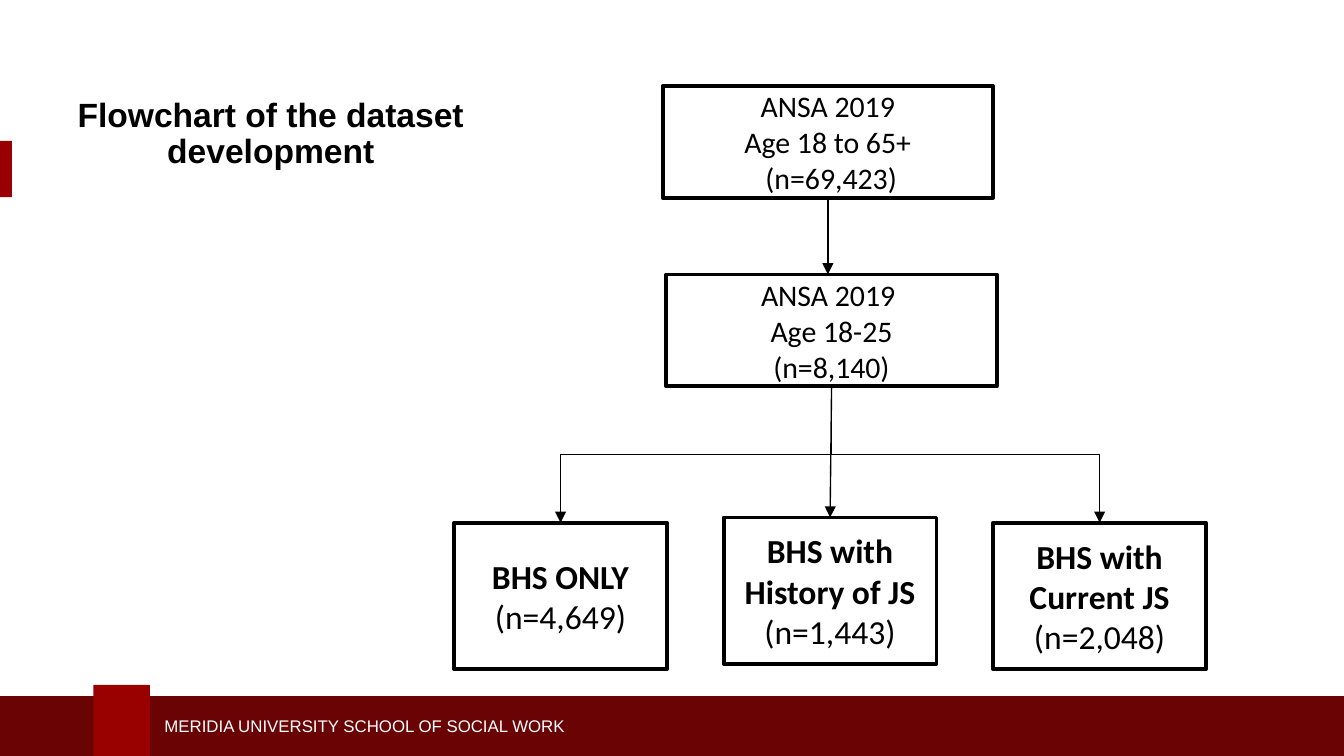
from lxml.etree import SubElement
from pptx import Presentation
from pptx.dml.color import RGBColor
from pptx.enum.shapes import MSO_CONNECTOR, MSO_SHAPE
from pptx.enum.text import MSO_ANCHOR, MSO_AUTO_SIZE, PP_ALIGN
from pptx.oxml.ns import qn
from pptx.util import Pt

# Content
TITLE = "Flowchart of the dataset development"
FOOTER = "MERIDIA UNIVERSITY SCHOOL OF SOCIAL WORK"
# Lines of text, left, top
SAMPLES = [
    (["ANSA 2019", "Age 18 to 65+", " (n=69,423)"], 355, 46),
    (["ANSA 2019 ", "Age 18-25", "(n=8,140)"], 357, 147),
]
# Group name, count, top
GROUPS = [
    ("BHS ONLY", "(n=4,649)", 280),
    ("BHS with History of JS", "(n=1,443)", 277.2),
    ("BHS with Current JS", "(n=2,048)", 280),
]
SAMPLE_SIZE = (177, 60)
GROUP_SIZE = (114, 78.5)
GROUP_LEFT, GROUP_STEP = 243.3, 144.4
# Left, top, width, height, colour
BANDS = [
    (0, 75.5, 6.4, 30.2, "990000"),
    (-2, 373, 726, 36, "690304"),
    (50, 367, 30.3, 42, "990000"),
]


def color(value):
    return RGBColor.from_string(value)


def write(frame, lines, size, font="Calibri", ink="000000", bold_lines=0,
          align=PP_ALIGN.CENTER, anchor=MSO_ANCHOR.MIDDLE):
    frame.word_wrap = True
    frame.vertical_anchor = anchor
    for i, line in enumerate(lines):
        paragraph = frame.paragraphs[0] if i == 0 else frame.add_paragraph()
        paragraph.alignment = align
        run = paragraph.add_run()
        run.text = line
        run.font.size = Pt(size)
        run.font.name = font
        run.font.bold = i < bold_lines
        run.font.color.rgb = color(ink)


def rectangle(left, top, width, height, fill=None):
    shape = slide.shapes.add_shape(
        MSO_SHAPE.RECTANGLE, Pt(left), Pt(top), Pt(width), Pt(height))
    shape.shadow.inherit = False
    if fill:
        shape.fill.solid()
        shape.fill.fore_color.rgb = color(fill)
        shape.line.fill.background()
    else:
        shape.fill.background()
        shape.line.color.rgb = color("000000")
        shape.line.width = Pt(2)
    return shape


def bottom_middle(box):
    return box.left + box.width // 2, box.top + box.height


def arrow(source, target, kind=MSO_CONNECTOR.STRAIGHT, join_end=True):
    x, y = bottom_middle(source)
    end_x = target.left + target.width // 2 if join_end else x
    line = slide.shapes.add_connector(kind, x, y, end_x, target.top)
    line.begin_connect(source, 2)
    if join_end:
        line.end_connect(target, 0)
    line.line.color.rgb = color("000000")
    line.line.width = Pt(0.75)
    SubElement(line.line._get_or_add_ln(), qn("a:tailEnd"), type="triangle")
    SubElement(line._element.spPr, qn("a:effectLst"))
    if kind == MSO_CONNECTOR.ELBOW:
        # Turn the elbow so that it leaves downwards
        across, down = abs(end_x - x), target.top - y
        line.left = (x + end_x - down) // 2
        line.top = (y + target.top - across) // 2
        line.width, line.height = down, across
        rightwards = end_x > x
        turn = line._element.spPr.find(qn("a:xfrm"))
        turn.set("rot", str((270 if rightwards else 90) * 60000))
        turn.set("flipH", "1" if rightwards else "0")


presentation = Presentation()
presentation.slide_width, presentation.slide_height = Pt(720), Pt(405)
slide = presentation.slides.add_slide(presentation.slide_layouts[5])

# Side mark and footer
for band in BANDS:
    rectangle(*band)
footer = slide.shapes.add_textbox(Pt(81), Pt(380), Pt(284.5), Pt(18))
write(footer.text_frame, [FOOTER], 9, font="Arial", ink="FFFFFF",
      align=PP_ALIGN.LEFT)

# Title
title = slide.shapes.title
title.left, title.top, title.width, title.height = (
    Pt(23.8), Pt(49), Pt(242.6), Pt(46.8))
write(title.text_frame, [TITLE], 18, font="Arial", bold_lines=1,
      anchor=MSO_ANCHOR.TOP)
title.text_frame.auto_size = MSO_AUTO_SIZE.NONE
title.text_frame.paragraphs[0].line_spacing = 0.9

# Flowchart boxes
samples = []
for lines, left, top in SAMPLES:
    box = rectangle(left, top, *SAMPLE_SIZE)
    write(box.text_frame, lines, 16)
    samples.append(box)
groups = []
for i, (name, count, top) in enumerate(GROUPS):
    box = rectangle(GROUP_LEFT + i * GROUP_STEP, top, *GROUP_SIZE)
    write(box.text_frame, [name, count], 18, bold_lines=1)
    groups.append(box)

# Arrows
all_ages, young_adults = samples
only, history, current = groups
arrow(all_ages, young_adults, join_end=False)
arrow(young_adults, current, MSO_CONNECTOR.ELBOW)
arrow(young_adults, only, MSO_CONNECTOR.ELBOW)
arrow(young_adults, history)

presentation.save("out.pptx")
